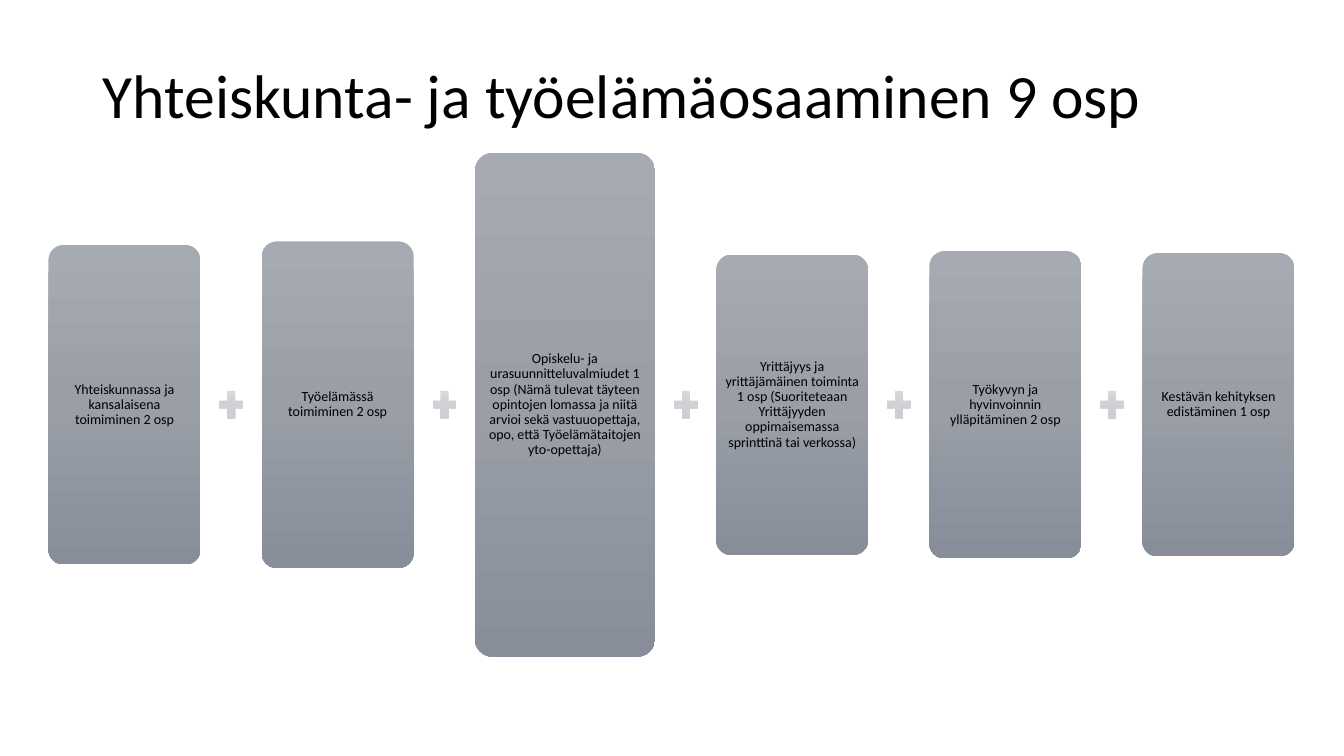
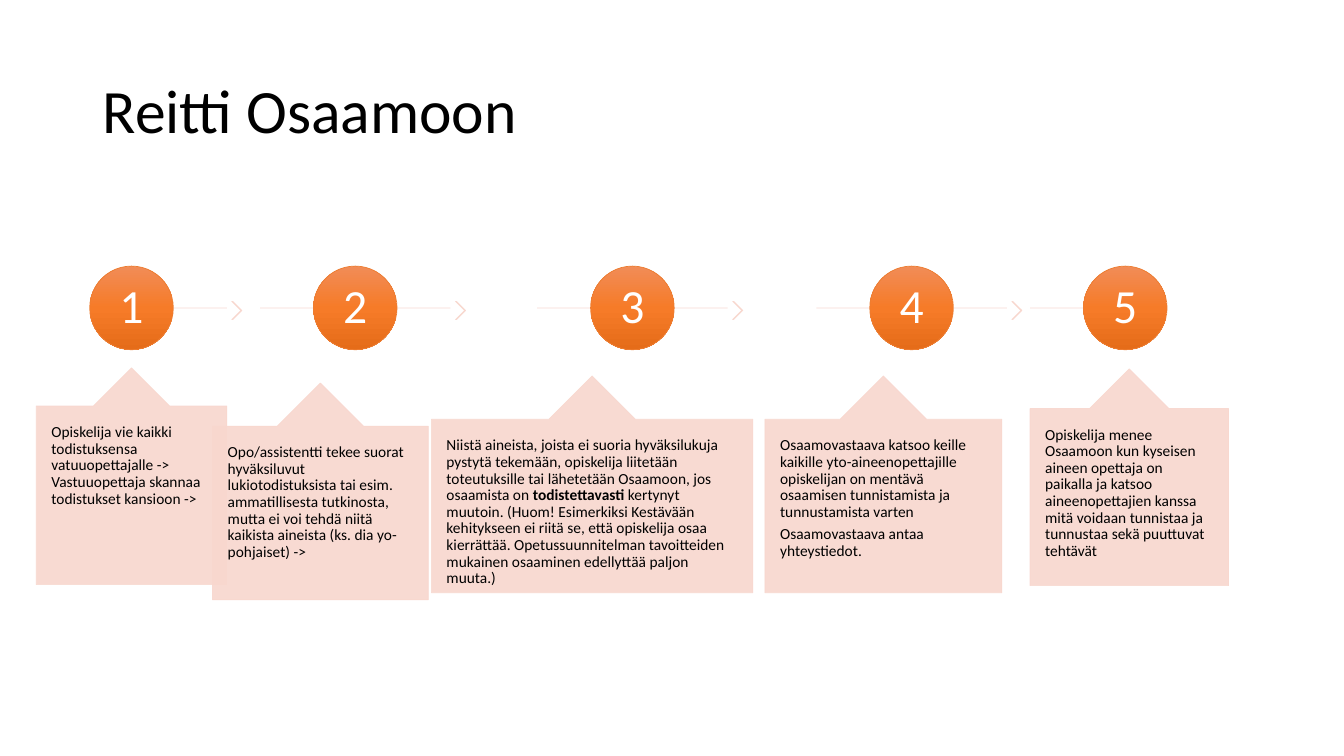
from copy import deepcopy
from dataclasses import dataclass
from typing import NamedTuple

from lxml import etree
from pptx import Presentation
from pptx.dml.color import RGBColor
from pptx.enum.shapes import MSO_CONNECTOR, MSO_SHAPE
from pptx.enum.text import MSO_ANCHOR, MSO_AUTO_SIZE, PP_ALIGN
from pptx.oxml.ns import qn
from pptx.util import Emu, Pt

ROUND = MSO_SHAPE.ROUNDED_RECTANGLE
PLUS = MSO_SHAPE.MATH_PLUS
OVAL = MSO_SHAPE.OVAL
CHEVRON = MSO_SHAPE.CHEVRON
CALLOUT = MSO_SHAPE.UP_ARROW_CALLOUT
STRAIGHT = MSO_CONNECTOR.STRAIGHT
LEFT, CENTER = PP_ALIGN.LEFT, PP_ALIGN.CENTER
TOP, MIDDLE = MSO_ANCHOR.TOP, MSO_ANCHOR.MIDDLE
FIXED = MSO_AUTO_SIZE.NONE

SCALE = 4572  # EMU in one px, 200 px to the inch
TITLE_ONLY = 5


# Shared look
@dataclass(frozen=True)
class Theme:
    font: str = "Calibri"
    ink: str = "000000"
    white: str = "FFFFFF"
    slate: tuple[str, ...] = ("A5AAB3", "999EA7", "878E9A")
    mist: tuple[str, ...] = ("D9DBDE", "D0D1D5", "C9CCD0")
    orange: tuple[str, ...] = ("F18C57", "F67B28", "E56C19")
    rim: str = "ED7D31"
    peach: str = "F8D7CE"
    alpha: int = 90000
    line: float = 0.5
    title: int = 44
    number: int = 34
    note: int = 11
    label: int = 10


THEME = Theme()


class Run(NamedTuple):
    text: str
    bold: bool = False


Para = tuple[Run, ...]


class Style(NamedTuple):
    size: int
    color: str = THEME.ink
    align: PP_ALIGN = LEFT
    anchor: MSO_ANCHOR = MIDDLE
    pad: tuple[int, int] = (20, 10)  # sides, top and bottom
    after: int = 0


class Rect(NamedTuple):
    left: int
    top: int
    width: int
    height: int


class Topic(NamedTuple):
    text: str
    height: int
    width: int = 302


class Step(NamedTuple):
    disc: int  # left edge of the numbered disc
    note: Rect
    paras: tuple[Para, ...]


TITLE = Style(THEME.title)
LABEL = Style(THEME.label, align=CENTER, pad=(8, 8))
NUMBER = Style(THEME.number, THEME.white, CENTER, pad=(6, 6))
NOTE = Style(THEME.note, anchor=TOP, pad=(30, 36), after=4)

# Slide contents
TOPICS = (
    Topic("Yhteiskunnassa ja kansalaisena toimiminen 2 osp", 634),
    Topic("Työelämässä toimiminen 2 osp", 648),
    Topic("Opiskelu- ja urasuunnitteluvalmiudet 1 osp (Nämä tulevat täyteen "
          "opintojen lomassa ja niitä arvioi sekä vastuuopettaja, opo, että "
          "Työelämätaitojen yto-opettaja)", 1000, 358),
    Topic("Yrittäjyys ja yrittäjämäinen toiminta 1 osp (Suoriteteaan "
          "Yrittäjyyden oppimaisemassa sprinttinä tai verkossa)", 596),
    Topic("Työkyvyn ja hyvinvoinnin ylläpitäminen 2 osp", 610),
    Topic("Kestävän kehityksen edistäminen 1 osp", 602),
)

STEPS = (
    Step(178, Rect(72, 730, 378, 430), (
        (Run("Opiskelija vie kaikki todistuksensa vatuuopettajalle -> "
             "Vastuuopettaja skannaa todistukset kansioon ->"),),)),
    Step(622, Rect(422, 760, 428, 430), (
        (Run("Opo/assistentti tekee suorat hyväksiluvut lukiotodistuksista "
             "tai esim. ammatillisesta tutkinosta, mutta ei voi tehdä niitä "
             "kaikista aineista (ks. dia yo-pohjaiset) ->"),),)),
    Step(1172, Rect(856, 746, 638, 430), (
        (Run("Niistä aineista, joista ei suoria hyväksilukuja pystytä "
             "tekemään, opiskelija liitetään toteutuksille tai lähetetään "
             "Osaamoon, jos osaamista on "),
         Run("todistettavasti", True),
         Run(" kertynyt muutoin. (Huom! Esimerkiksi Kestävään kehitykseen ei "
             "riitä se, että opiskelija osaa kierrättää. Opetussuunnitelman "
             "tavoitteiden mukainen osaaminen edellyttää paljon muuta.)")),)),
    Step(1726, Rect(1518, 746, 470, 430), (
        (Run("Osaamovastaava katsoo keille kaikille yto-aineenopettajille "
             "opiskelijan on mentävä osaamisen tunnistamista ja "
             "tunnustamista varten"),),
        (Run("Osaamovastaava antaa yhteystiedot."),))),
    Step(2150, Rect(2044, 732, 394, 430), (
        (Run("Opiskelija menee Osaamoon kun kyseisen aineen opettaja on "
             "paikalla ja katsoo aineenopettajien kanssa mitä voidaan "
             "tunnistaa ja tunnustaa sekä puuttuvat tehtävät"),),)),
)


# Drawing helpers
def px(count: float) -> Emu:
    return Emu(round(count * SCALE))


def write(shape, paras: tuple[Para, ...], style: Style) -> None:
    frame = shape.text_frame
    frame.word_wrap = True
    frame.auto_size = FIXED
    frame.vertical_anchor = style.anchor
    side, edge = style.pad
    frame.margin_left = frame.margin_right = px(side)
    frame.margin_top = frame.margin_bottom = px(edge)
    for index, runs in enumerate(paras):
        para = frame.add_paragraph() if index else frame.paragraphs[0]
        para.alignment = style.align
        para.line_spacing = 0.9
        para.space_before = Pt(0)
        para.space_after = Pt(style.after)
        for item in runs:
            run = para.add_run()
            run.text = item.text
            font = run.font
            font.name = THEME.font
            font.size = Pt(style.size)
            font.bold = item.bold
            font.color.rgb = RGBColor.from_string(style.color)


def add(slide, kind: MSO_SHAPE, rect: Rect, adjust: tuple[float, ...] = ()):
    shape = slide.shapes.add_shape(kind, *map(px, rect))
    shape.shadow.inherit = False
    shape.line.fill.background()
    for index, value in enumerate(adjust):
        shape.adjustments[index] = value
    return shape


def shade(shape, colors: tuple[str, ...]) -> None:
    fill = shape.fill
    fill.gradient()
    fill.gradient_angle = 270
    stops = shape._element.spPr.find(".//" + qn("a:gsLst"))
    stops.insert(1, deepcopy(stops[0]))
    for index, (stop, color) in enumerate(zip(fill.gradient_stops, colors)):
        stop.position = index / 2
        stop.color.rgb = RGBColor.from_string(color)


def rule(shape, color: str) -> None:
    shape.line.color.rgb = RGBColor.from_string(color)
    shape.line.width = Pt(THEME.line)


def fade(shape) -> None:
    for color in shape._element.spPr.iter(qn("a:srgbClr")):
        etree.SubElement(color, qn("a:alpha")).set("val", str(THEME.alpha))


def tint(shape) -> None:
    shape.fill.solid()
    shape.fill.fore_color.rgb = RGBColor.from_string(THEME.peach)
    rule(shape, THEME.peach)
    fade(shape)


def track(slide, start: int, end: int, level: int) -> None:
    line = slide.shapes.add_connector(
        STRAIGHT, px(start), px(level), px(end), px(level))
    rule(line, THEME.peach)
    fade(line)
    etree.SubElement(line._element.spPr, qn("a:effectLst"))


def begin(deck, text: str, rect: Rect):
    slide = deck.slides.add_slide(deck.slide_layouts[TITLE_ONLY])
    title = slide.shapes.title
    title.left, title.top, title.width, title.height = map(px, rect)
    write(title, ((Run(text),),), TITLE)
    return slide


# Slide 1: topics joined by plus signs
def topics(deck) -> None:
    slide = begin(deck, "Yhteiskunta- ja työelämäosaaminen 9 osp",
                  Rect(184, 82, 2300, 226))
    left, gap, level = 96, 121, 803
    wide, high = 64, 74
    for index, topic in enumerate(TOPICS):
        if index:
            plus = add(slide, PLUS, Rect(left - (gap + wide) // 2,
                                         level - high // 2, wide, high))
            shade(plus, THEME.mist)
        box = add(slide, ROUND, Rect(left, level - topic.height // 2,
                                     topic.width, topic.height), (0.1,))
        shade(box, THEME.slate)
        write(box, ((Run(topic.text),),), LABEL)
        left += topic.width + gap


# Slide 2: numbered route with notes
def route(deck) -> None:
    slide = begin(deck, "Reitti Osaamoon", Rect(184, 80, 2300, 290))
    top, size = 528, 166
    level = top + size // 2
    for number, step in enumerate(STEPS, 1):
        first, last = number == 1, number == len(STEPS)
        middle = step.disc + size // 2
        end = middle if last else step.disc + 272
        track(slide, middle if first else step.disc - 106, end, level)
        if not last:
            tint(add(slide, CHEVRON, Rect(end + 10, 598, 20, 36), (0.9,)))
        disc = add(slide, OVAL, Rect(step.disc, top, size, size))
        shade(disc, THEME.orange)
        rule(disc, THEME.rim)
        write(disc, ((Run(str(number)),),), NUMBER)
        note = add(slide, CALLOUT, step.note, (0.5, 0.2, 0.2, 1))
        tint(note)
        write(note, step.paras, NOTE)


def main() -> None:
    deck = Presentation()
    deck.slide_width, deck.slide_height = px(2667), px(1500)
    topics(deck)
    route(deck)
    deck.save("out.pptx")


if __name__ == "__main__":
    main()
